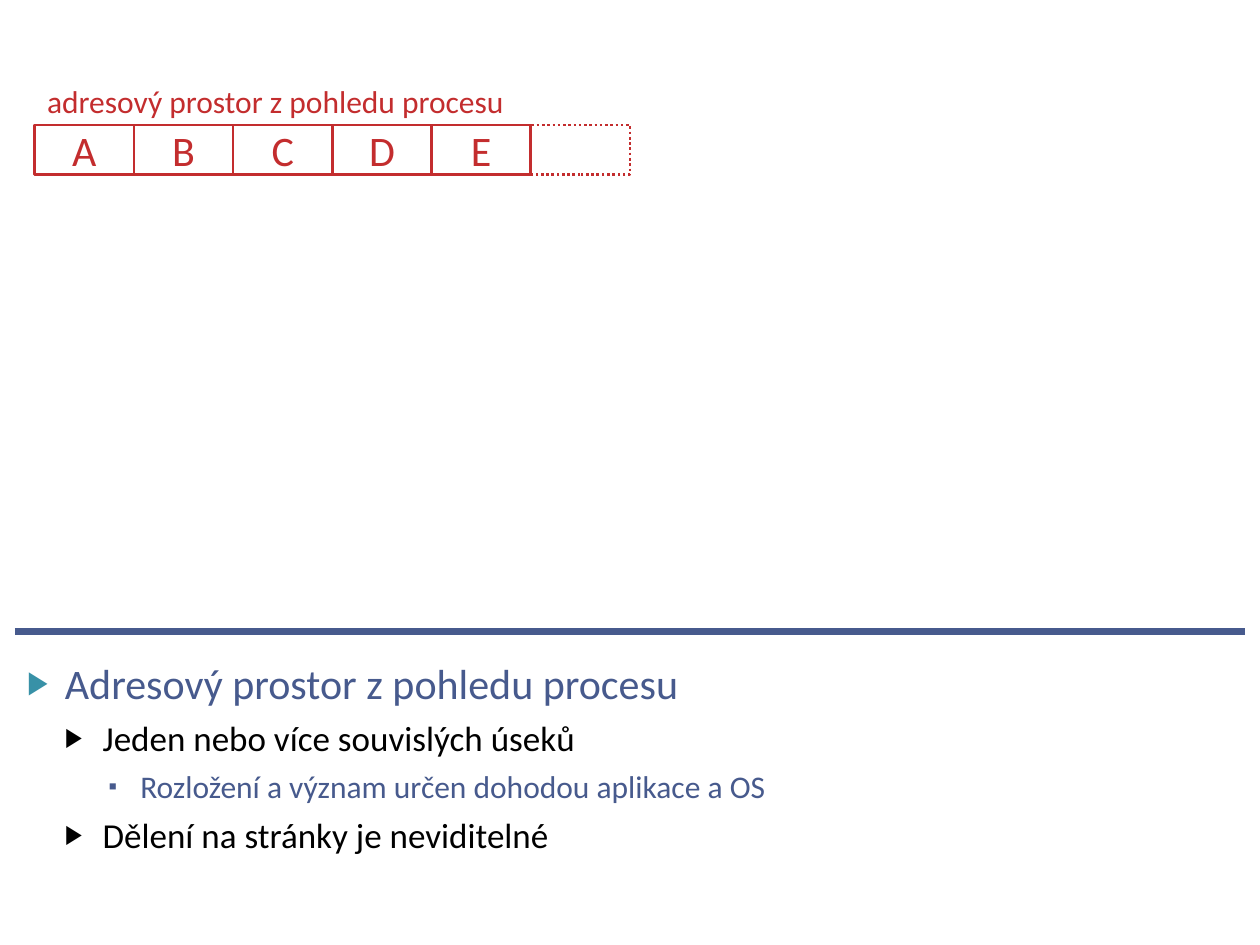
from lxml.etree import SubElement
from pptx import Presentation
from pptx.dml.color import RGBColor
from pptx.enum.dml import MSO_LINE
from pptx.enum.shapes import MSO_CONNECTOR, MSO_SHAPE
from pptx.enum.text import MSO_ANCHOR, PP_ALIGN
from pptx.oxml.ns import qn
from pptx.util import Cm, Pt

BLUE = RGBColor(0x47, 0x5A, 0x8D)
TEAL = RGBColor(0x38, 0x91, 0xA7)
RED = RGBColor(0xC3, 0x2D, 0x2E)
BLACK = RGBColor(0x00, 0x00, 0x00)

PAGE_LEFT, PAGE_TOP, PAGE_WIDTH, PAGE_HEIGHT = 0.7, 2.52, 2, 1
PAGES = ["A", "B", "C", "D", "E", ""]
OUTLINE = [
    (0, "Adresový prostor z pohledu procesu"),
    (1, "Jeden nebo více souvislých úseků"),
    (2, "Rozložení a význam určen dohodou aplikace a OS"),
    (1, "Dělení na stránky je neviditelné"),
]
LEVELS = [
    dict(size=24, color=BLUE, space_before=6, bullet="▶", bullet_color=TEAL, hanging=0.76),
    dict(size=20, color=BLACK, space_before=5, bullet="▶", bullet_color=BLACK, hanging=0.76),
    dict(size=18, color=BLUE, space_before=5, bullet="▪", bullet_color=BLUE, hanging=0.64),
]


def write_text(paragraph, text, *, size, color, align=PP_ALIGN.LEFT, space_before=0):
    """Write one formatted run into a paragraph."""
    paragraph.alignment = align
    paragraph.space_before = Pt(space_before)
    run = paragraph.add_run()
    run.text = text
    run.font.name = "Calibri"
    run.font.size = Pt(size)
    run.font.color.rgb = color


def set_bullet(paragraph, bullet, color, hanging):
    """Give a paragraph a coloured bullet and the indent of its level."""
    properties = paragraph._p.get_or_add_pPr()
    properties.set("marL", str(Cm(0.76 * (paragraph.level + 1))))
    properties.set("indent", str(-Cm(hanging)))
    bullet_color = SubElement(properties, qn("a:buClr"))
    SubElement(bullet_color, qn("a:srgbClr"), val=str(color))
    SubElement(properties, qn("a:buSzPct"), val="76000")
    SubElement(properties, qn("a:buFont"), typeface="Calibri")
    SubElement(properties, qn("a:buChar"), char=bullet)


def add_text_frame(slide, left, top, width, height):
    """Add a wrapping text box and return its text frame."""
    shape = slide.shapes.add_textbox(Cm(left), Cm(top), Cm(width), Cm(height))
    shape.text_frame.word_wrap = True
    return shape.text_frame


def add_divider(slide):
    """Add the thick rule above the outline."""
    line = slide.shapes.add_connector(
        MSO_CONNECTOR.STRAIGHT, Cm(0.3), Cm(12.73), Cm(25.1), Cm(12.73)
    )
    line.line.color.rgb = BLUE
    line.line.width = Pt(4)
    SubElement(line._element.spPr, qn("a:effectLst"))


def add_outline(slide):
    """Add the bulleted outline."""
    frame = add_text_frame(slide, 0.3, 13.13, 24.8, 4.8)
    for index, (level, text) in enumerate(OUTLINE):
        paragraph = frame.add_paragraph() if index else frame.paragraphs[0]
        paragraph.level = level
        style = LEVELS[level]
        write_text(paragraph, text, size=style["size"], color=style["color"],
                   space_before=style["space_before"])
        set_bullet(paragraph, style["bullet"], style["bullet_color"], style["hanging"])


def add_page(slide, index, label):
    """Add one page of the address space, dotted when it has no label."""
    shape = slide.shapes.add_shape(
        MSO_SHAPE.RECTANGLE, Cm(PAGE_LEFT + index * PAGE_WIDTH), Cm(PAGE_TOP),
        Cm(PAGE_WIDTH), Cm(PAGE_HEIGHT)
    )
    shape.shadow.inherit = False
    shape.fill.background()
    shape.line.color.rgb = RED
    shape.line.width = Pt(1.5)
    if not label:
        shape.line.dash_style = MSO_LINE.ROUND_DOT
        return
    frame = shape.text_frame
    frame.margin_left = frame.margin_right = frame.margin_top = frame.margin_bottom = 0
    frame.vertical_anchor = MSO_ANCHOR.MIDDLE
    write_text(frame.paragraphs[0], label, size=24, color=RED, align=PP_ALIGN.CENTER)


def main():
    """Build the slide and save it."""
    presentation = Presentation()
    presentation.slide_width, presentation.slide_height = Cm(25.4), Cm(19.05)
    slide = presentation.slides.add_slide(presentation.slide_layouts[6])
    add_divider(slide)
    add_outline(slide)
    caption = add_text_frame(slide, PAGE_LEFT, 1.52, 9.83, 1.02)
    write_text(caption.paragraphs[0], "adresový prostor z pohledu procesu", size=18, color=RED)
    for index, label in enumerate(PAGES):
        add_page(slide, index, label)
    presentation.save("out.pptx")


if __name__ == "__main__":
    main()
